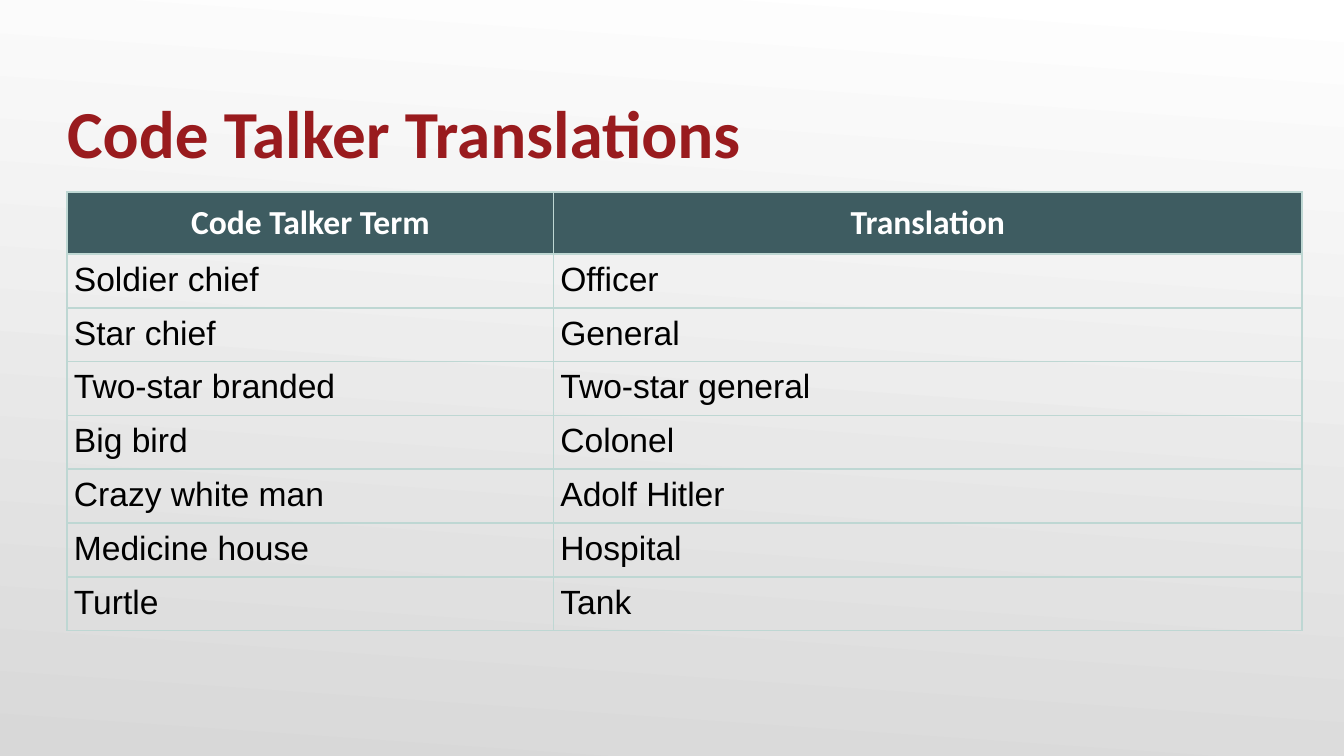
import pptx
import pptx.util
import pptx.oxml
import pptx.oxml.ns
import pptx.dml.color
import pptx.enum.text
import pptx.text.text

Inches = pptx.util.Inches
Align = pptx.enum.text.PP_ALIGN
Anchor = pptx.enum.text.MSO_ANCHOR

# Content
TITLE = "Code Talker Translations"
HEADS = ("Code Talker Term", "Translation")
TERMS = [
    ("Soldier chief", "Officer"),
    ("Star chief", "General"),
    ("Two-star branded", "Two-star general"),
    ("Big bird", "Colonel"),
    ("Crazy white man", "Adolf Hitler"),
    ("Medicine house", "Hospital"),
    ("Turtle", "Tank"),
]

THEME = {
    "title": {"font": "Calibri", "size": 36, "color": "991B1E", "bold": True},
    "head": {"font": "Calibri", "size": 18, "color": "FFFFFF", "bold": True,
             "align": Align.CENTER},
    "body": {"font": "Arial", "size": 18, "color": "000000"},
    "fill": "3E5C61",
    "line": "BED7D3",
    "back": ("FFFFFF", "D8D8D8"),
}

# Layout in inches
WIDE = 10
HIGH = WIDE * 9 / 16
LEFT, TOP = 0.5, 1.43
COLS = (3.62, 5.57)
HEAD_H, ROW_H = 0.46, 0.38
HEAD_PAD, BODY_PAD = 0.08, 0.05


def rgb(code):
    return pptx.dml.color.RGBColor.from_string(code)


def write(frame, text, font, size, color, bold=False, align=Align.LEFT):
    para = frame.paragraphs[0]
    para.alignment = align
    run = para.add_run()
    run.text = text
    # The paragraph end shares the run's font, as it affects row height
    end = pptx.text.text.Font(para._p.get_or_add_endParaRPr())
    for face in (run.font, end):
        face.name = font
        face.size = pptx.util.Pt(size)
        face.bold = bold
        face.color.rgb = rgb(color)


def pad(part, left, top, right, bottom):
    part.margin_left, part.margin_top = Inches(left), Inches(top)
    part.margin_right, part.margin_bottom = Inches(right), Inches(bottom)


def rule(cell):
    """Draw a thin line on all four sides of a cell."""
    props = cell._tc.get_or_add_tcPr()
    for spot, side in enumerate(("lnL", "lnR", "lnT", "lnB")):
        props.insert(spot, pptx.oxml.parse_xml(
            f'<a:{side} {pptx.oxml.ns.nsdecls("a")} w="{pptx.util.Pt(1)}">'
            f'<a:solidFill><a:srgbClr val="{THEME["line"]}"/></a:solidFill>'
            f'</a:{side}>'))


def main():
    deck = pptx.Presentation()
    deck.slide_width, deck.slide_height = Inches(WIDE), Inches(HIGH)
    slide = deck.slides.add_slide(deck.slide_layouts[6])

    # Background
    fill = slide.background.fill
    fill.gradient()
    fill.gradient_angle = 360 - 94
    for stop, code in zip(fill.gradient_stops, THEME["back"]):
        stop.color.rgb = rgb(code)

    # Title
    box = slide.shapes.add_textbox(
        Inches(LEFT), Inches(0.34), Inches(5.89), Inches(0.94))
    frame = box.text_frame
    frame.word_wrap = True
    frame.vertical_anchor = Anchor.BOTTOM
    pad(frame, 0, 0.05, 0, 0)
    write(frame, TITLE, **THEME["title"])

    # Table
    rows = [HEADS] + TERMS
    table = slide.shapes.add_table(
        len(rows), len(COLS), Inches(LEFT), Inches(TOP), Inches(sum(COLS)),
        Inches(HEAD_H + ROW_H * len(TERMS))).table
    table.first_row = table.horz_banding = False
    for col, width in zip(table.columns, COLS):
        col.width = Inches(width)
    for r, texts in enumerate(rows):
        head = r == 0
        table.rows[r].height = Inches(HEAD_H if head else ROW_H)
        for c, text in enumerate(texts):
            cell = table.cell(r, c)
            pad(cell, *[HEAD_PAD if head else BODY_PAD] * 4)
            write(cell.text_frame, text, **THEME["head" if head else "body"])
            if head:
                cell.fill.solid()
                cell.fill.fore_color.rgb = rgb(THEME["fill"])
            else:
                cell.fill.background()
            rule(cell)

    deck.save("out.pptx")


if __name__ == "__main__":
    main()
